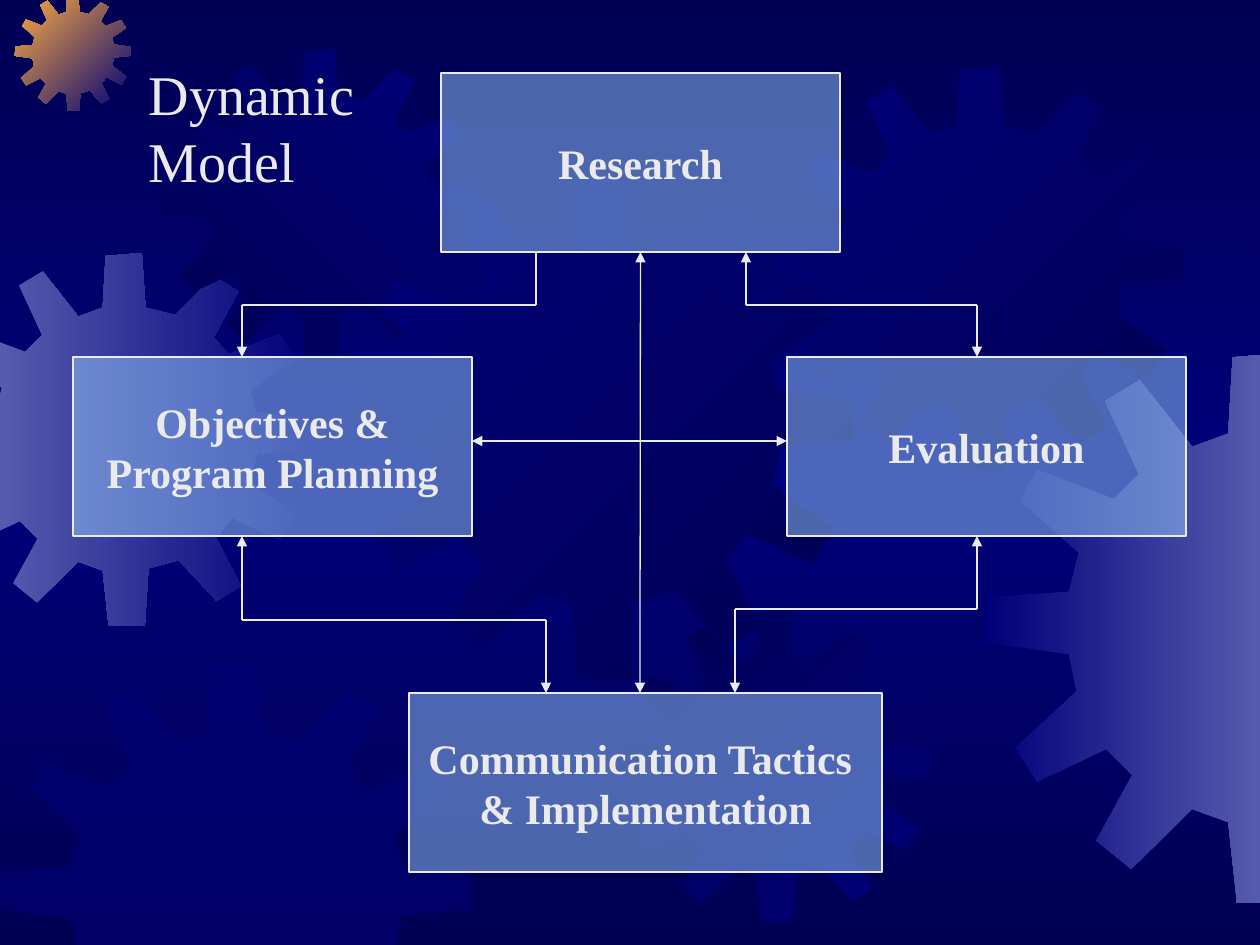
import copy

import pptx
import pptx.dml.color
import pptx.enum.shapes
import pptx.enum.text
import pptx.oxml.ns
import pptx.util
from lxml import etree

RGBColor = pptx.dml.color.RGBColor
NAVY = RGBColor(0x00, 0x00, 0x54)
BLUE = RGBColor(0x00, 0x00, 0x7A)
VIOLET = RGBColor(0x55, 0x5B, 0xAD)
ORANGE = RGBColor(0xFC, 0xAB, 0x40)
SKY = RGBColor(0x99, 0xCC, 0xFF)
PALE = RGBColor(0xEA, 0xEA, 0xEA)

FONT = "Times New Roman"
WIDTH, HEIGHT = 1260, 945
SCALE = 914400 / 126  # EMU in one px

# Outline of a twelve-toothed gear, drawn in a square of GEAR_SIZE px
GEAR_SIZE = 505
GEAR = [
    (321, 84), (281, 74), (276, 0), (227, 4), (223, 74), (190, 86),
    (142, 25), (110, 44), (141, 111), (118, 134), (48, 107), (32, 135),
    (86, 183), (77, 219), (1, 224), (0, 265), (77, 276), (84, 310),
    (28, 362), (48, 393), (111, 363), (135, 387), (102, 447), (134, 473),
    (190, 418), (223, 430), (231, 504), (280, 505), (285, 427), (326, 416),
    (377, 471), (410, 451), (377, 386), (398, 358), (464, 389), (484, 354),
    (423, 310), (431, 272), (505, 265), (504, 227), (430, 215), (422, 186),
    (483, 144), (462, 110), (394, 137), (373, 115), (407, 52), (374, 32),
]

# left, top, size, colours, clockwise gradient angle
GEARS = [
    (-62, 253, 373, (VIOLET, BLUE), 0),
    (15, -5, 116, (ORANGE, BLUE), 45),
    (164, 49, 312, (NAVY, BLUE), 315),
    (349, 175, 505, (BLUE, NAVY), 45),
    (0, 662, 471, (BLUE,), 0),
    (619, 610, 312, (NAVY, BLUE), 45),
    (779, 67, 403, (BLUE, NAVY), 45),
    (985, 353, 551, (BLUE, VIOLET), 0),
]

# left, top, width, height, lines of text
BOXES = {
    "research": (441, 73, 399, 179, ["Research"]),
    "tactics": (409, 693, 473, 179, ["Communication Tactics ", "& Implementation"]),
    "evaluation": (787, 357, 399, 179, ["Evaluation"]),
    "objectives": (73, 357, 399, 179, ["Objectives &", "Program Planning"]),
}

# corner points, arrowhead at the start (every route has one at its end)
ROUTES = [
    ([(242, 536), (242, 620), (546, 620), (546, 693)], True),
    ([(472, 441), (787, 441)], True),
    ([(977, 536), (977, 609), (735, 609), (735, 693)], True),
    ([(536, 252), (536, 305), (242, 305), (242, 357)], False),
    ([(746, 252), (746, 305), (977, 305), (977, 357)], True),
]


def px(n):
    return pptx.util.Emu(round(n * SCALE))


def add_xml(parent, tag, **attrs):
    return etree.SubElement(parent, pptx.oxml.ns.qn(tag), attrs)


def set_gradient(fill, colors, angle):
    fill.gradient()
    fill.gradient_angle = (360 - angle) % 360
    for stop, color in zip(fill.gradient_stops, colors):
        stop.color.rgb = color


def set_half_clear(sp, color):
    sp.fill.solid()
    sp.fill.fore_color.rgb = color
    srgb = sp._element.spPr.find(".//" + pptx.oxml.ns.qn("a:srgbClr"))
    add_xml(srgb, "a:alpha", val="50000")


def clip(points, axis, limit, sign):
    """Keep the part of a polygon where sign * (coordinate - limit) >= 0."""
    kept = []
    for a, b in zip(points, points[1:] + points[:1]):
        da, db = sign * (a[axis] - limit), sign * (b[axis] - limit)
        if da >= 0:
            kept.append(a)
        if da * db < 0:
            t = da / (da - db)
            kept.append((a[0] + t * (b[0] - a[0]), a[1] + t * (b[1] - a[1])))
    return kept


def add_background(slide):
    fill = slide.background.fill
    set_gradient(fill, (NAVY, BLUE), 90)
    stops = slide._element.find(".//" + pptx.oxml.ns.qn("a:gsLst"))
    stops[1].set("pos", "50000")
    last = copy.deepcopy(stops[0])
    last.set("pos", "100000")
    stops.append(last)


def add_gear(slide, left, top, size, colors, angle):
    k = size / GEAR_SIZE
    points = [(left + x * k, top + y * k) for x, y in GEAR]
    for axis, limit, sign in ((0, 0, 1), (0, WIDTH, -1), (1, 0, 1), (1, HEIGHT, -1)):
        points = clip(points, axis, limit, sign)
    points = [(px(x), px(y)) for x, y in points]
    builder = slide.shapes.build_freeform(*points[0])
    builder.add_line_segments(points[1:], close=True)
    sp = builder.convert_to_shape()
    sp.shadow.inherit = False
    sp.line.fill.background()
    if len(colors) == 1:
        set_half_clear(sp, colors[0])
    else:
        set_gradient(sp.fill, colors, angle)


def write_lines(tf, lines, size, bold, align):
    tf.text = "\n".join(lines)
    for p in tf.paragraphs:
        p.alignment = align
        p.font.name = FONT
        p.font.size = pptx.util.Pt(size)
        p.font.bold = bold
        p.font.color.rgb = PALE


def add_box(slide, left, top, width, height, lines):
    sp = slide.shapes.add_shape(pptx.enum.shapes.MSO_SHAPE.RECTANGLE,
                                px(left), px(top), px(width), px(height))
    sp.shadow.inherit = False
    set_half_clear(sp, SKY)
    sp.line.color.rgb = PALE
    sp.line.width = pptx.util.Pt(1)
    tf = sp.text_frame
    tf.word_wrap = False
    tf.vertical_anchor = pptx.enum.text.MSO_ANCHOR.MIDDLE
    write_lines(tf, lines, 24, True, pptx.enum.text.PP_ALIGN.CENTER)
    return sp


def add_segment(slide, start, end, head, tail):
    line = slide.shapes.add_connector(pptx.enum.shapes.MSO_CONNECTOR.STRAIGHT,
                                      px(start[0]), px(start[1]), px(end[0]), px(end[1]))
    line.line.color.rgb = PALE
    line.line.width = pptx.util.Pt(0.75)
    ln = line.line._get_or_add_ln()
    if head:
        add_xml(ln, "a:headEnd", type="triangle")
    if tail:
        add_xml(ln, "a:tailEnd", type="triangle")
    add_xml(line._element.spPr, "a:effectLst")
    return line


def add_route(slide, points, head):
    last = len(points) - 2
    for i, (start, end) in enumerate(zip(points, points[1:])):
        add_segment(slide, start, end, head and i == 0, i == last)


def add_title(slide, left, top, width, height, lines):
    title = slide.shapes.title
    title.left, title.top, title.width, title.height = map(px, (left, top, width, height))
    tf = title.text_frame
    tf.word_wrap = True
    tf.auto_size = pptx.enum.text.MSO_AUTO_SIZE.NONE
    tf.vertical_anchor = pptx.enum.text.MSO_ANCHOR.TOP
    write_lines(tf, lines, 32, False, pptx.enum.text.PP_ALIGN.LEFT)
    slide.shapes._spTree.append(title._element)  # bring to the front


def main():
    prs = pptx.Presentation()
    prs.slide_width, prs.slide_height = px(WIDTH), px(HEIGHT)
    slide = prs.slides.add_slide(prs.slide_layouts[5])

    # Backdrop
    add_background(slide)
    for gear in GEARS:
        add_gear(slide, *gear)

    # Model boxes and the arrows between them
    boxes = {name: add_box(slide, *box) for name, box in BOXES.items()}
    for points, head in ROUTES:
        add_route(slide, points, head)
    spine = add_segment(slide, (640, 252), (640, 693), True, True)
    spine.begin_connect(boxes["research"], 2)

    add_title(slide, 136, 53, 244, 147, ["Dynamic", "Model"])
    prs.save("out.pptx")


if __name__ == "__main__":
    main()
